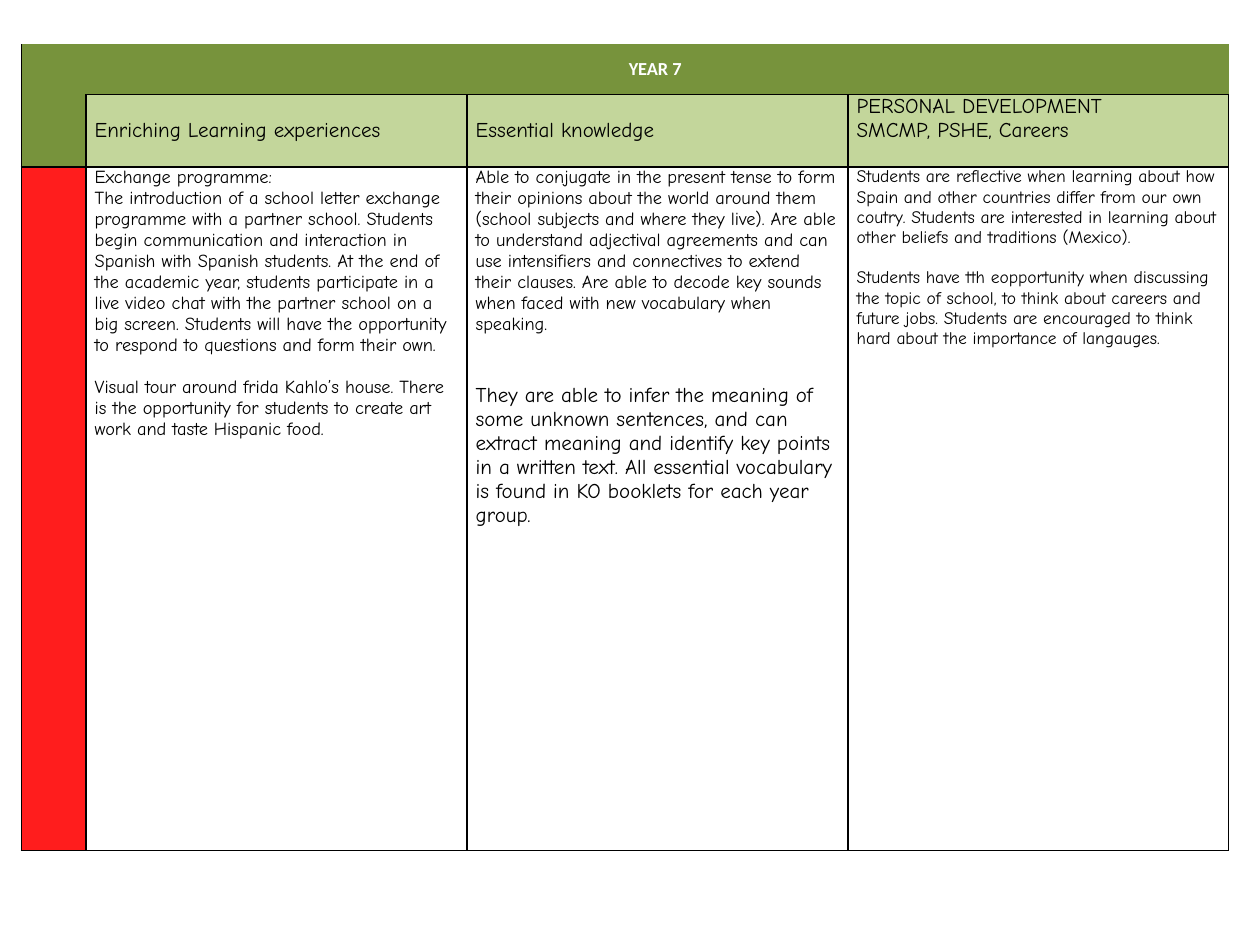
from lxml import etree
from pptx import Presentation
from pptx.dml.color import RGBColor
from pptx.enum.text import MSO_ANCHOR, PP_ALIGN
from pptx.oxml.ns import qn
from pptx.util import Cm, Pt

TOP, MIDDLE = MSO_ANCHOR.TOP, MSO_ANCHOR.MIDDLE
LEFT, CENTER = PP_ALIGN.LEFT, PP_ALIGN.CENTER

BLACK = RGBColor(0x00, 0x00, 0x00)
WHITE = RGBColor(0xFF, 0xFF, 0xFF)
GREEN = RGBColor(0x77, 0x93, 0x3C)
PALE_GREEN = RGBColor(0xC3, 0xD6, 0x9B)
RED = RGBColor(0xFF, 0x1D, 0x1D)

COLS = [1.3, 7.68, 7.68, 7.68]
ROWS = [1.02, 1.46, 13.77]

HEADINGS = [
    ["Enriching Learning experiences"],
    ["Essential knowledge"],
    ["PERSONAL DEVELOPMENT", "SMCMP, PSHE, Careers"],
]
BODIES = [
    [
        ("Exchange programme:", 10.5, 0),
        ("The introduction of a school letter exchange programme with a partner school. "
         "Students begin communication and interaction in Spanish with Spanish students. "
         "At the end of the academic year, students participate in a live video chat with "
         "the partner school on a big screen. Students will have the opportunity to respond "
         "to questions and form their own.", 10.5, 0),
        ("Visual tour around frida Kahlo’s house. There is the opportunity for students to "
         "create art work and taste Hispanic food.", 10.5, 12),
    ],
    [
        ("Able to conjugate in the present tense to form their opinions about the world "
         "around them (school subjects and where they live). Are able to understand "
         "adjectival agreements and can use intensifiers and connectives to extend their "
         "clauses. Are able to decode key sounds when faced with new vocabulary when "
         "speaking.", 10.5, 0),
        ("They are able to infer the meaning of some unknown sentences, and can extract "
         "meaning and identify key points in a written text. All essential vocabulary is "
         "found in KO booklets for each year group.", 12, 27.5),
    ],
    [
        ("Students are reflective when learning about how Spain and other countries differ "
         "from our own coutry. Students are interested in learning about other beliefs and "
         "traditions (Mexico).", 10, 0),
        ("Students have tth eopportunity when discussing the topic of school, to think about "
         "careers and future jobs. Students are encouraged to think hard about the "
         "importance of langauges.", 10, 11.5),
    ],
]


class Deck:
    """Holds the style and the current slide, and adds elements to it."""

    font = "Comic Neue"
    line_width = Pt(1)

    def __init__(self, prs):
        self.s = prs.slides.add_slide(prs.slide_layouts[6])

    def table(self, left, top, cols, rows):
        frame = self.s.shapes.add_table(len(rows), len(cols), Cm(left), Cm(top),
                                        Cm(sum(cols)), Cm(sum(rows)))
        tbl = frame.table
        tbl.first_row = tbl.horz_banding = False
        for col, width in zip(tbl.columns, cols):
            col.width = Cm(width)
        for row, height in zip(tbl.rows, rows):
            row.height = Cm(height)
        return tbl

    def cell(self, cell, color, edges="LRTB", anchor=TOP, bottom=0):
        cell.margin_left = cell.margin_right = Cm(0.18)
        cell.margin_top, cell.margin_bottom = 0, Cm(bottom)
        cell.vertical_anchor = anchor
        tc_pr = cell._tc.get_or_add_tcPr()
        for edge in "LRTB":
            ln = etree.SubElement(tc_pr, qn(f"a:ln{edge}"), w=str(self.line_width))
            if edge in edges:
                fill = etree.SubElement(ln, qn("a:solidFill"))
                etree.SubElement(fill, qn("a:srgbClr"), val=str(BLACK))
            else:
                etree.SubElement(ln, qn("a:noFill"))
        cell.fill.solid()
        cell.fill.fore_color.rgb = color

    def text(self, cell, paragraphs, color=BLACK, font=font, bold=False, align=LEFT):
        tf = cell.text_frame
        for i, (text, size, before) in enumerate(paragraphs):
            p = tf.add_paragraph() if i else tf.paragraphs[0]
            p.alignment = align
            p.space_before = Pt(before)
            r = p.add_run()
            r.text = text
            r.font.name, r.font.size, r.font.bold = font, Pt(size), bold
            r.font.color.rgb = color


def main():
    prs = Presentation()
    prs.slide_width, prs.slide_height = Cm(25.4), Cm(19.05)
    deck = Deck(prs)
    tbl = deck.table(0.43, 0.89, COLS, ROWS)

    deck.cell(tbl.cell(0, 0), GREEN, "L")
    deck.cell(tbl.cell(1, 0), GREEN, "LRB")
    deck.cell(tbl.cell(2, 0), RED)
    for col, (heading, body) in enumerate(zip(HEADINGS, BODIES), start=1):
        deck.cell(tbl.cell(0, col), GREEN, "RB" if col == 3 else "B", MIDDLE)
        head = tbl.cell(1, col)
        deck.cell(head, PALE_GREEN, anchor=MIDDLE, bottom=0.48 if len(heading) > 1 else 0)
        deck.text(head, [(line, 12, 0) for line in heading])
        deck.cell(tbl.cell(2, col), WHITE)
        deck.text(tbl.cell(2, col), body)

    tbl.cell(0, 0).merge(tbl.cell(1, 0))
    tbl.cell(0, 1).merge(tbl.cell(0, 3))
    deck.text(tbl.cell(0, 1), [("YEAR 7 ", 10.5, 0)], WHITE, "Calibri", True, CENTER)
    prs.save("out.pptx")


if __name__ == "__main__":
    main()
